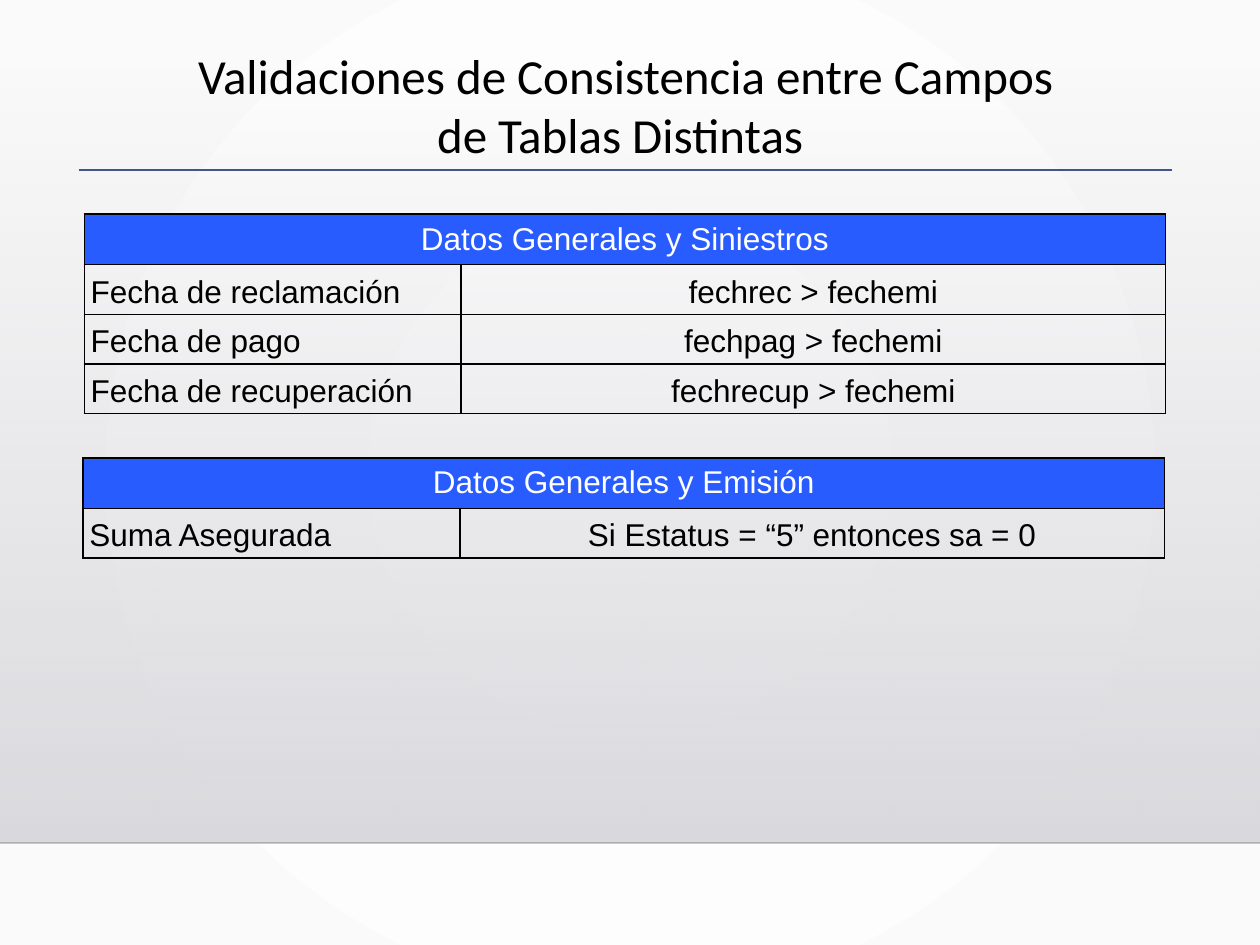
from dataclasses import dataclass

from lxml import etree
from pptx import Presentation
from pptx.dml.color import RGBColor
from pptx.enum.shapes import MSO_CONNECTOR, MSO_SHAPE
from pptx.enum.text import MSO_ANCHOR, PP_ALIGN
from pptx.oxml import parse_xml
from pptx.oxml.ns import nsdecls, qn
from pptx.slide import Slide
from pptx.util import Pt

STRAIGHT, RECTANGLE = MSO_CONNECTOR.STRAIGHT, MSO_SHAPE.RECTANGLE
MIDDLE = MSO_ANCHOR.MIDDLE
CENTER, JUSTIFY = PP_ALIGN.CENTER, PP_ALIGN.JUSTIFY

BLACK = RGBColor(0, 0, 0)
WHITE = RGBColor(255, 255, 255)
OFF_WHITE = RGBColor(0xFA, 0xFA, 0xFA)
HAZE = RGBColor(0xDA, 0xDA, 0xDE)
RULE_BLUE = RGBColor(0x41, 0x55, 0x88)
HEADER_BLUE = RGBColor(0x29, 0x5C, 0xFF)

RADIAL = ('<a:path path="circle"><a:fillToRect l="50000" t="50000" '
          'r="50000" b="50000"/></a:path>')
DOWNWARD = '<a:lin ang="5400000" scaled="0"/>'
TITLE_FORMAT = {"name": "Calibri", "size": Pt(28)}
CELL_FORMAT = {"name": "Arial", "size": Pt(18)}
BODY_MARGINS = {"margin_left": Pt(3.6), "margin_right": Pt(3.6),
                "margin_top": 0, "margin_bottom": 0}


def set_attributes(target, values):
    """Set every attribute of a format dict on the target."""
    for name, value in values.items():
        setattr(target, name, value)


def gradient(stops, direction):
    """Return a gradient fill from (position, colour, opacity) percentages."""
    marks = "".join(
        f'<a:gs pos="{position * 1000}"><a:srgbClr val="{color}">'
        f'<a:alpha val="{opacity * 1000}"/></a:srgbClr></a:gs>'
        for position, color, opacity in stops)
    return parse_xml(f'<a:gradFill {nsdecls("a")} rotWithShape="1">'
                     f'<a:gsLst>{marks}</a:gsLst>{direction}</a:gradFill>')


@dataclass
class Painter:
    """Draw the elements of the current slide in one style."""

    slide: Slide
    row_height: float = 28.4
    column_widths: tuple = (215.3, 402.5)

    def background(self, stops):
        self.slide.background.fill.solid()
        properties = self.slide.element.find(".//" + qn("p:bgPr"))
        properties.replace(properties[0], gradient(stops, RADIAL))

    def haze(self, left, top, width, height, stops):
        band = self.slide.shapes.add_shape(
            RECTANGLE, Pt(left), Pt(top), Pt(width), Pt(height))
        band.shadow.inherit = False
        band.line.fill.background()
        band.fill.solid()
        properties = band.element.spPr
        properties.replace(properties.find(qn("a:solidFill")),
                           gradient(stops, DOWNWARD))

    def rule(self, left, right, top, color, weight, opacity=100):
        line = self.slide.shapes.add_connector(
            STRAIGHT, Pt(left), Pt(top), Pt(right), Pt(top))
        line.line.color.rgb = color
        line.line.width = Pt(weight)
        properties = line.element.spPr
        ink = properties.find(".//" + qn("a:srgbClr"))
        etree.SubElement(ink, qn("a:alpha"), val=str(opacity * 1000))
        etree.SubElement(properties, qn("a:effectLst"))

    def title(self, left, top, width, height, text):
        box = self.slide.shapes.add_textbox(
            Pt(left), Pt(top), Pt(width), Pt(height))
        box.text_frame.word_wrap = True
        paragraph = box.text_frame.paragraphs[0]
        paragraph.text = text
        paragraph.alignment = CENTER
        set_attributes(paragraph.font, TITLE_FORMAT)
        paragraph.font.color.rgb = BLACK

    def border(self, cell):
        properties = cell._tc.get_or_add_tcPr()
        for side in ("lnL", "lnR", "lnT", "lnB"):
            edge = etree.SubElement(properties, qn(f"a:{side}"), w=str(Pt(1)))
            fill = etree.SubElement(edge, qn("a:solidFill"))
            etree.SubElement(fill, qn("a:srgbClr"), val=str(BLACK))

    def cell_text(self, cell, text, alignment, color):
        cell.vertical_anchor = MIDDLE
        paragraph = cell.text_frame.paragraphs[0]
        paragraph.text = text
        paragraph.alignment = alignment
        set_attributes(paragraph.font, CELL_FORMAT)
        paragraph.font.color.rgb = color
        return paragraph

    def rules_table(self, left, top, heading, checks):
        rows = len(checks) + 1
        table = self.slide.shapes.add_table(
            rows, 2, Pt(left), Pt(top), Pt(sum(self.column_widths)),
            Pt(rows * self.row_height)).table
        set_attributes(table, {"first_row": False, "horz_banding": False})
        for column, width in zip(table.columns, self.column_widths):
            column.width = Pt(width)
        for row in table.rows:
            row.height = Pt(self.row_height)
        for cell in table.iter_cells():
            self.border(cell)
            cell.fill.background()
        header = table.cell(0, 0)
        header.merge(table.cell(0, 1))
        header.fill.solid()
        header.fill.fore_color.rgb = HEADER_BLUE
        self.cell_text(header, heading, CENTER, WHITE)
        for row, check in enumerate(checks, 1):
            for column, alignment in enumerate((JUSTIFY, CENTER)):
                cell = table.cell(row, column)
                set_attributes(cell, BODY_MARGINS)
                paragraph = self.cell_text(cell, check[column], alignment, BLACK)
                paragraph.line_spacing = 1.15


def main():
    deck = Presentation()
    deck.slide_width, deck.slide_height = Pt(720), Pt(540)
    painter = Painter(deck.slides.add_slide(deck.slide_layouts[6]))
    painter.background([(0, WHITE, 100), (100, OFF_WHITE, 100)])
    painter.haze(0, 36.7, 720, 445, [(0, HAZE, 0), (100, HAZE, 100)])
    painter.rule(0, 720, 481.7, BLACK, 1, 20)
    painter.title(92.2, 22.3, 530.6, 74.9,
                  "Validaciones de Consistencia entre Campos de Tablas Distintas ")
    painter.rule(44.9, 669.5, 97.2, RULE_BLUE, 0.75)
    painter.rules_table(48.2, 122.4, "Datos Generales y Siniestros", [
        ("Fecha de reclamación", "fechrec > fechemi"),
        ("Fecha de pago", "fechpag > fechemi"),
        ("Fecha de recuperación", "fechrecup > fechemi")])
    painter.rules_table(47.5, 261.6, "Datos Generales y Emisión", [
        ("Suma Asegurada", "Si Estatus = “5” entonces sa = 0")])
    deck.save("out.pptx")


if __name__ == "__main__":
    main()
